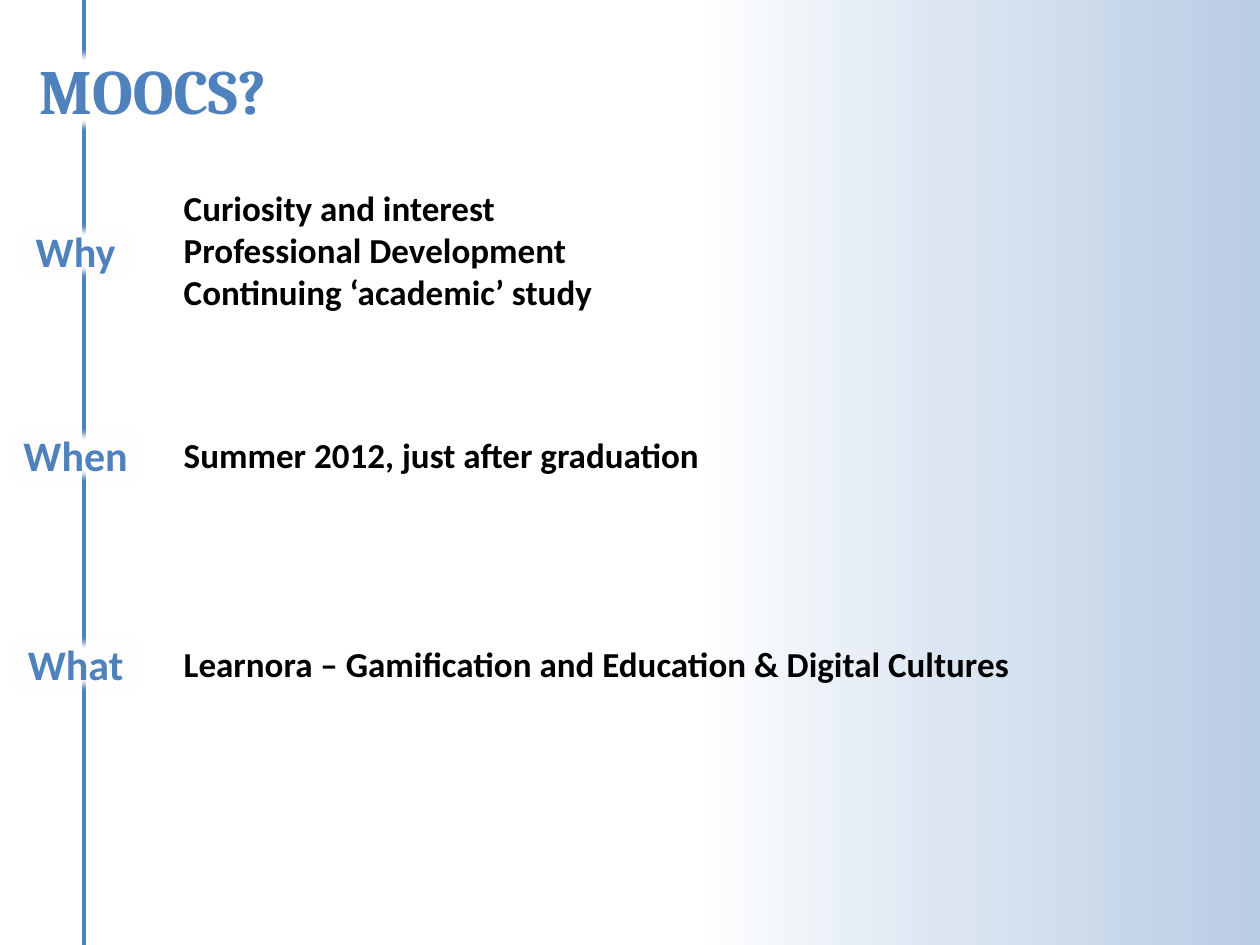
from lxml.etree import SubElement
from pptx import Presentation
from pptx.dml.color import RGBColor
from pptx.enum.shapes import MSO_CONNECTOR, MSO_SHAPE
from pptx.enum.text import MSO_ANCHOR, MSO_AUTO_SIZE, PP_ALIGN
from pptx.oxml import parse_xml
from pptx.oxml.ns import nsdecls, qn
from pptx.util import Inches, Pt

BLUE, BLACK, WHITE = "4F81BD", "000000", "FFFFFF"
HEAD = {"name": "Cambria", "size": Pt(36), "bold": True}
LABEL = {"name": "Calibri", "size": Pt(24), "bold": True}
BODY = {"name": "Calibri", "size": Pt(20), "bold": True}


def rgb(code):
    return RGBColor.from_string(code)


class Deck:
    def __init__(self, wide, high):
        self.prs = Presentation()
        self.prs.slide_width, self.prs.slide_height = Inches(wide), Inches(high)
        self.slide = self.prs.slides.add_slide(self.prs.slide_layouts[6])

    def fade(self, stops, angle):
        """Fill the background with a linear gradient."""
        fill = self.slide.background.fill
        fill.solid()
        fill.fore_color.rgb = rgb(WHITE)
        plain = self.slide._element.find(".//" + qn("p:bgPr")).find(qn("a:solidFill"))
        marks = "".join(f'<a:gs pos="{pos * 1000}"><a:srgbClr val="{code}"/></a:gs>'
                        for pos, code in stops)
        grad = parse_xml(f'<a:gradFill {nsdecls("a")} rotWithShape="1"><a:gsLst>{marks}'
                         f'</a:gsLst><a:lin ang="{angle * 60000}" scaled="0"/></a:gradFill>')
        plain.getparent().replace(plain, grad)

    def line(self, x1, y1, x2, y2, code, width):
        line = self.slide.shapes.add_connector(
            MSO_CONNECTOR.STRAIGHT, Inches(x1), Inches(y1), Inches(x2), Inches(y2))
        line.line.color.rgb, line.line.width = rgb(code), Pt(width)
        SubElement(line._element.spPr, qn("a:effectLst"))

    def label(self, shape, rows, style, code, align):
        frame = shape.text_frame
        frame.text = "\n".join(rows)
        frame.word_wrap = True
        frame.auto_size = MSO_AUTO_SIZE.SHAPE_TO_FIT_TEXT
        frame.vertical_anchor = MSO_ANCHOR.TOP
        for para in frame.paragraphs:
            para.alignment = align
            for run in para.runs:
                for key, value in style.items():
                    setattr(run.font, key, value)
                run.font.color.rgb = rgb(code)

    def text(self, x, y, w, h, rows, style, code, align=PP_ALIGN.LEFT):
        box = self.slide.shapes.add_textbox(Inches(x), Inches(y), Inches(w), Inches(h))
        self.label(box, rows, style, code, align)

    def patch(self, x, y, w, h, word, style, code, align=PP_ALIGN.LEFT):
        """White box with soft edges that breaks the line behind a word."""
        box = self.slide.shapes.add_shape(
            MSO_SHAPE.RECTANGLE, Inches(x), Inches(y), Inches(w), Inches(h))
        box.fill.solid()
        box.fill.fore_color.rgb = rgb(WHITE)
        box.line.fill.background()
        box.shadow.inherit = False
        edge = SubElement(box._element.spPr.find(qn("a:effectLst")), qn("a:softEdge"))
        edge.set("rad", str(Pt(5)))
        self.label(box, [word], style, code, align)


def main():
    deck = Deck(10, 7.5)

    # Background and time line
    deck.fade([(0, "B9CDE5"), (25, "DCE6F2"), (45, WHITE)], 180)
    deck.line(0.67, 0, 0.67, 7.5, BLUE, 2.25)

    # Title
    deck.patch(0.21, 0.36, 4.39, 0.71, "MOOCS?", HEAD, BLUE)

    # Questions and answers, each pair centred on one height
    pairs = [
        (1.99, "Why", 0.93, ["Curiosity and interest", "Professional Development",
                             "Continuing ‘academic’ study"]),
        (3.61, "When", 1.08, ["Summer 2012, just after graduation"]),
        (5.27, "What", 1.08, ["Learnora – Gamification and Education & Digital Cultures"]),
    ]
    for mid, word, wide, rows in pairs:
        high = 0.1 + len(rows) * 0.34
        deck.patch(0.6 - wide / 2, mid - 0.25, wide, 0.5, word, LABEL, BLUE,
                   PP_ALIGN.CENTER)
        deck.text(1.36, mid - high / 2, 8.19, high, rows, BODY, BLACK)

    deck.prs.save("out.pptx")


if __name__ == "__main__":
    main()
